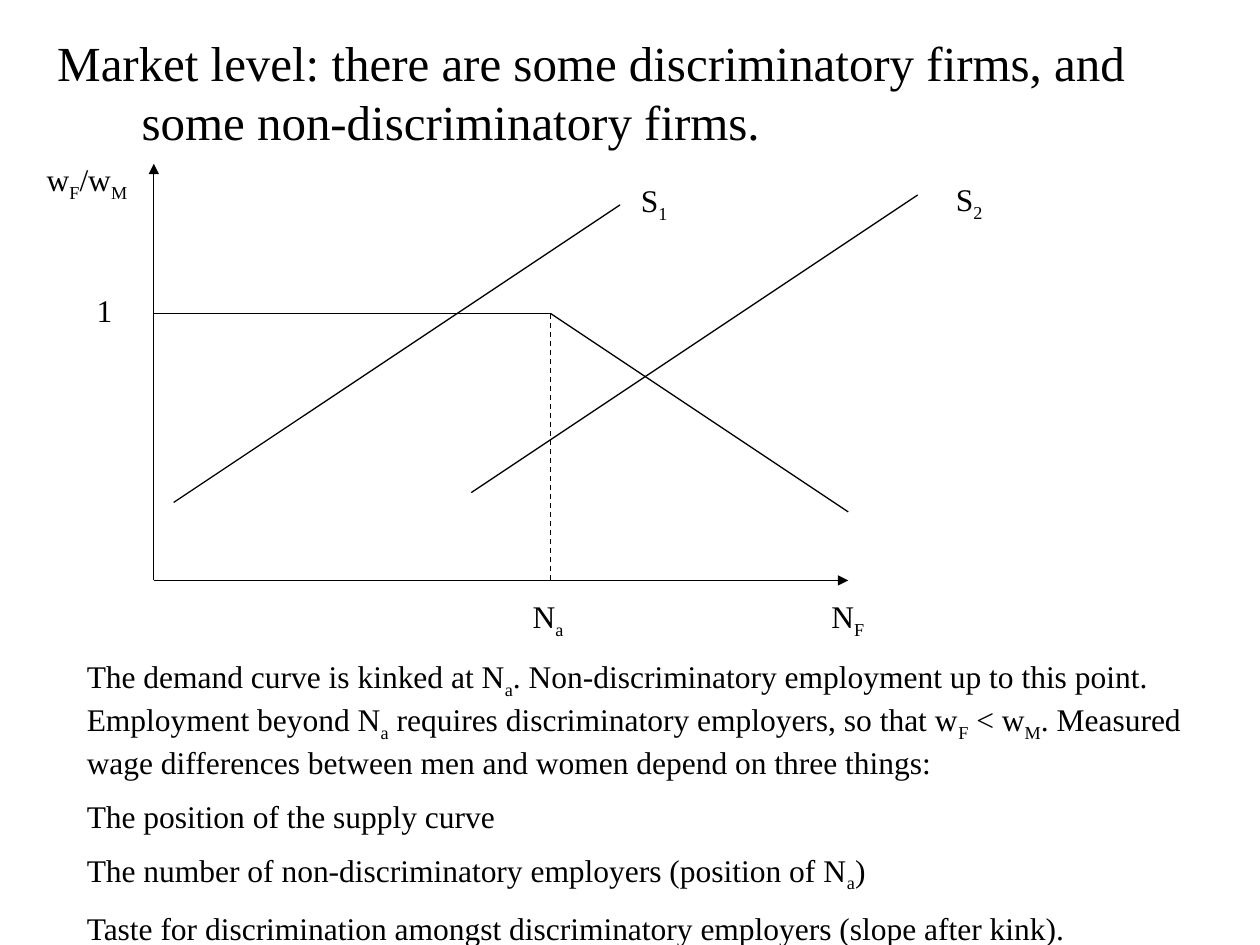
from dataclasses import dataclass

from lxml import etree
from pptx import Presentation
from pptx.dml.color import RGBColor
from pptx.enum.dml import MSO_LINE
from pptx.enum.shapes import MSO_CONNECTOR
from pptx.enum.text import MSO_ANCHOR, MSO_AUTO_SIZE, PP_ALIGN
from pptx.oxml.ns import qn
from pptx.util import Cm, Pt

STRAIGHT = MSO_CONNECTOR.STRAIGHT
DASH = MSO_LINE.DASH
TOP = MSO_ANCHOR.TOP
LEFT = PP_ALIGN.LEFT
FIT_SHAPE = MSO_AUTO_SIZE.SHAPE_TO_FIT_TEXT
FIXED = MSO_AUTO_SIZE.NONE


@dataclass(frozen=True)
class Theme:
    font: str = "Times New Roman"
    ink: RGBColor = RGBColor(0, 0, 0)
    paper: RGBColor = RGBColor(255, 255, 255)
    heading: Pt = Pt(28)
    text: Pt = Pt(18)
    line: Pt = Pt(0.75)


THEME = Theme()

HEADING = ("Market level: there are some discriminatory firms, "
           "and some non-discriminatory firms.")
# Bars enclose subscripts
NOTES = [
    "The demand curve is kinked at N|a|. Non-discriminatory employment up to "
    "this point. Employment beyond N|a| requires discriminatory employers, so "
    "that w|F| < w|M|. Measured wage differences between men and women depend "
    "on three things:",
    "The position of the supply curve",
    "The number of non-discriminatory employers (position of N|a|)",
    "Taste for discrimination amongst discriminatory employers (slope after kink).",
]


def add_spans(para, text, size):
    """Add one run for each plain or subscript piece of the text."""
    para.alignment = LEFT
    for index, piece in enumerate(text.split("|")):
        if not piece:
            continue
        span = para.add_run()
        span.text = piece
        span.font.name = THEME.font
        span.font.size = size
        span.font.color.rgb = THEME.ink
        if index % 2:
            span._r.get_or_add_rPr().set("baseline", "-25000")


def add_text(page, box, texts, wrap=True):
    left, top, width, height = map(Cm, box)
    frame = page.shapes.add_textbox(left, top, width, height).text_frame
    frame.word_wrap = wrap
    frame.auto_size = FIT_SHAPE
    for index, text in enumerate(texts):
        para = frame.add_paragraph() if index else frame.paragraphs[0]
        if wrap:
            para.space_before = Pt(9)
        add_spans(para, text, THEME.text)


def add_line(page, start, end, arrow=False, dashed=False):
    link = page.shapes.add_connector(STRAIGHT, *map(Cm, start + end))
    link.line.color.rgb = THEME.ink
    link.line.width = THEME.line
    if dashed:
        link.line.dash_style = DASH
    if arrow:
        outline = link.line._get_or_add_ln()
        etree.SubElement(outline, qn("a:tailEnd"), type="triangle")
    etree.SubElement(link._element.spPr, qn("a:effectLst"))


def build_heading(page, box):
    body = page.placeholders[1]
    body.left, body.top, body.width, body.height = map(Cm, box)
    frame = body.text_frame
    frame.auto_size = FIXED
    frame.vertical_anchor = TOP
    para = frame.paragraphs[0]
    add_spans(para, HEADING, THEME.heading)
    # Hanging indent without a bullet
    props = para._p.get_or_add_pPr()
    props.set("marL", str(Cm(1.7)))
    props.set("indent", str(-Cm(1.7)))
    etree.SubElement(props, qn("a:buNone"))


def build_diagram(page, box):
    left, top, width, height = box

    def at(x, y):
        return left + x, top + y

    origin, kink = at(0, height), at(8, 3.02)

    # Axes
    add_line(page, origin, at(0, 0), arrow=True)
    add_line(page, origin, at(width, height), arrow=True)

    # Parallel supply curves
    for x, y in ((0.4, 6.83), (6.4, 6.63)):
        add_line(page, at(x, y), at(x + 9, y - 6))

    # Kinked demand curve
    add_line(page, at(0, 3.02), kink)
    add_line(page, kink, at(width, 7.02))
    add_line(page, kink, at(8, height), dashed=True)

    # Labels: text, x, y, width, wrap
    labels = [
        ("N|F", 13.41, 8.61, 1.4, True),
        ("N|a", 7.39, 8.61, 1.4, True),
        ("w|F|/w|M", -2.41, -0.2, 2.2, False),
        ("S|1", 9.57, 0.23, 1.07, False),
        ("S|2", 15.92, 0.21, 1.07, False),
        ("1", -1.4, 2.44, 0.84, False),
    ]
    for text, x, y, label_width, wrap in labels:
        add_text(page, at(x, y) + (label_width, 1.02), [text], wrap)


def main():
    deck = Presentation()
    deck.slide_width, deck.slide_height = Cm(25.4), Cm(19.05)
    page = deck.slides.add_slide(deck.slide_layouts[1])
    page.background.fill.solid()
    page.background.fill.fore_color.rgb = THEME.paper
    title = page.shapes.title._element
    title.getparent().remove(title)

    build_heading(page, (0.9, 0.53, 23, 16))
    build_diagram(page, (3.1, 3.3, 14, 8.4))
    add_text(page, (1.5, 13.13, 23.2, 6), NOTES)
    deck.save("out.pptx")


if __name__ == "__main__":
    main()
